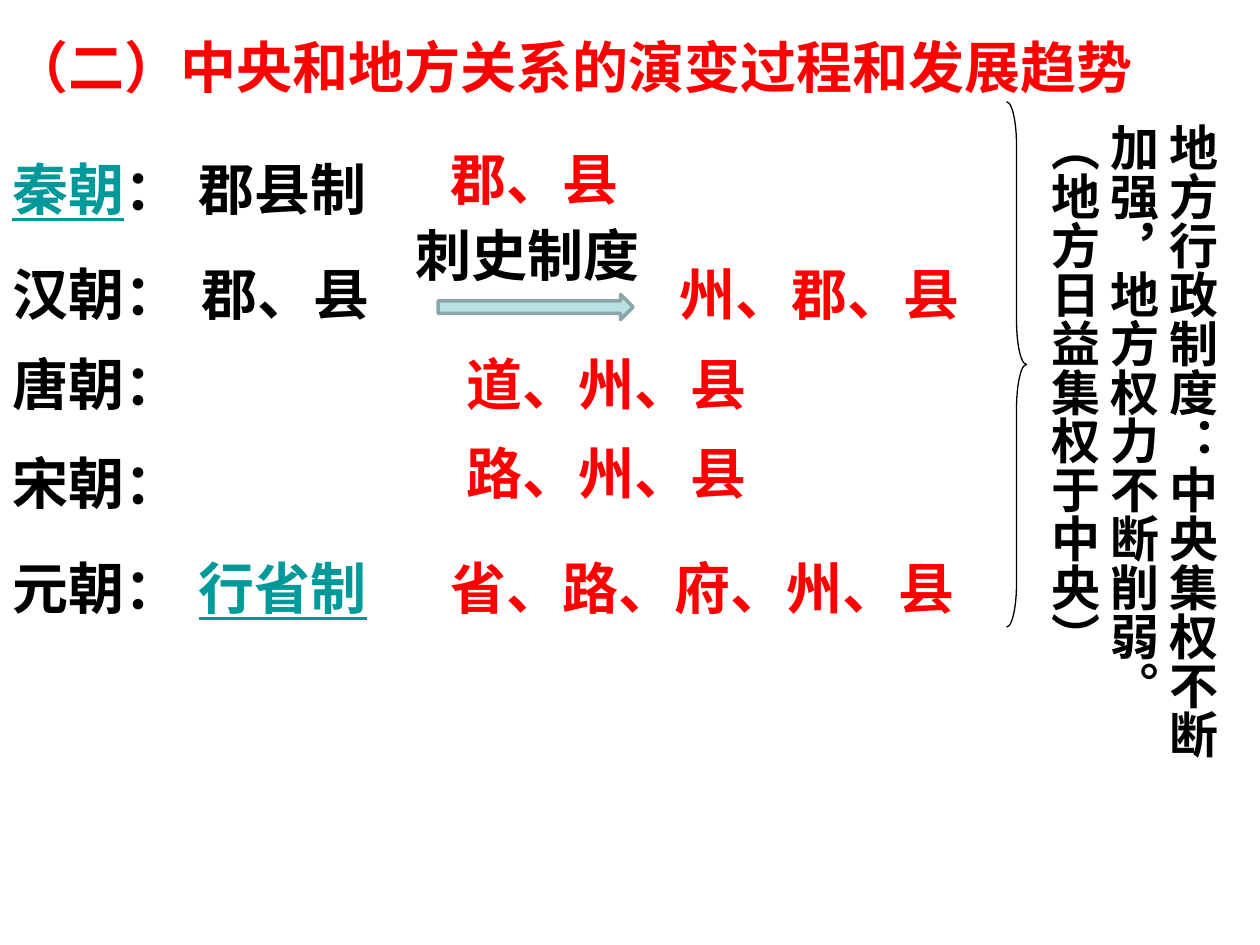
from lxml.etree import SubElement
from pptx import Presentation
from pptx.dml.color import RGBColor
from pptx.enum.shapes import MSO_SHAPE
from pptx.oxml.ns import qn
from pptx.util import Pt

FONT = "Noto Sans CJK SC"
RED, BLACK, TEAL = "FF0000", "000000", "009999"
TITLE_SIZE = LABEL_SIZE = 32
SUMMARY_SIZE = 28
SIDE_INSET = 7.2
LABEL_SLACK = 4
LABEL_HEIGHT = 45.6

TITLE = "（二）中央和地方关系的演变过程和发展趋势"
SUMMARY = "地方行政制度：中央集权不断加强，地方权力不断削弱。（地方日益集权于中央）"

LABELS = [
    (0, 85, [("秦朝", TEAL), ("：", BLACK)]),
    (106.5, 85, [("郡县制", BLACK)]),
    (250.5, 79, [("郡、县", RED)]),
    (0, 144.7, [("汉朝：", BLACK)]),
    (108, 144.7, [("郡、县", BLACK)]),
    (230.4, 122.4, [("刺史制度", BLACK)]),
    (381.4, 144.7, [("州、郡、县", RED)]),
    (0, 196.3, [("唐朝：", BLACK)]),
    (259.4, 196.3, [("道、州、县", RED)]),
    (0, 252.7, [("宋朝：", BLACK)]),
    (259.4, 247, [("路、州、县", RED)]),
    (0, 313, [("元朝：", BLACK)]),
    (106.5, 313, [("行省制", TEAL)]),
    (250.5, 313, [("省、路、府、州、县", RED)]),
]


def color(value):
    return RGBColor.from_string(value)


def add_text(slide, box, runs, size):
    shape = slide.shapes.add_textbox(*map(Pt, box))
    frame = shape.text_frame
    frame.word_wrap = True
    paragraph = frame.paragraphs[0]
    for text, run_color in runs:
        run = paragraph.add_run()
        run.text = text
        font = run.font
        font.name, font.size, font.bold = FONT, Pt(size), True
        font.underline = run_color == TEAL
        font.color.rgb = color(run_color)
        properties = run._r.get_or_add_rPr()
        properties.set("lang", "zh-CN")
        SubElement(properties, qn("a:ea")).set("typeface", FONT)
    return shape


def add_outline(slide, kind, box, line, width, fill=None):
    shape = slide.shapes.add_shape(kind, *map(Pt, box))
    shape.shadow.inherit = False
    shape.line.color.rgb = color(line)
    shape.line.width = Pt(width)
    if fill:
        shape.fill.solid()
        shape.fill.fore_color.rgb = color(fill)
    else:
        shape.fill.background()
    return shape


def main():
    presentation = Presentation()
    presentation.slide_width, presentation.slide_height = Pt(720), Pt(540)
    slide = presentation.slides.add_slide(presentation.slide_layouts[6])

    add_text(slide, (0, 15, 720, 70.5), [(TITLE, RED)], TITLE_SIZE)

    for left, top, runs in LABELS:
        characters = sum(len(text) for text, _ in runs)
        width = characters * LABEL_SIZE + 2 * SIDE_INSET + LABEL_SLACK
        add_text(slide, (left, top, width, LABEL_HEIGHT), runs, LABEL_SIZE)

    brace = add_outline(slide, MSO_SHAPE.RIGHT_BRACE, (575.2, 58.2, 11.4, 300.2), BLACK, 0.75)
    brace.adjustments[0] = 2.2
    add_outline(slide, MSO_SHAPE.RIGHT_ARROW, (250.4, 168.3, 111.4, 14.4), "8AA6A8", 2, "BBE0E3")

    summary = add_text(slide, (586.3, 63.4, 115.2, 383.8), [(SUMMARY, BLACK)], SUMMARY_SIZE)
    summary.text_frame._txBody.bodyPr.set("vert", "eaVert")

    presentation.save("out.pptx")


if __name__ == "__main__":
    main()
